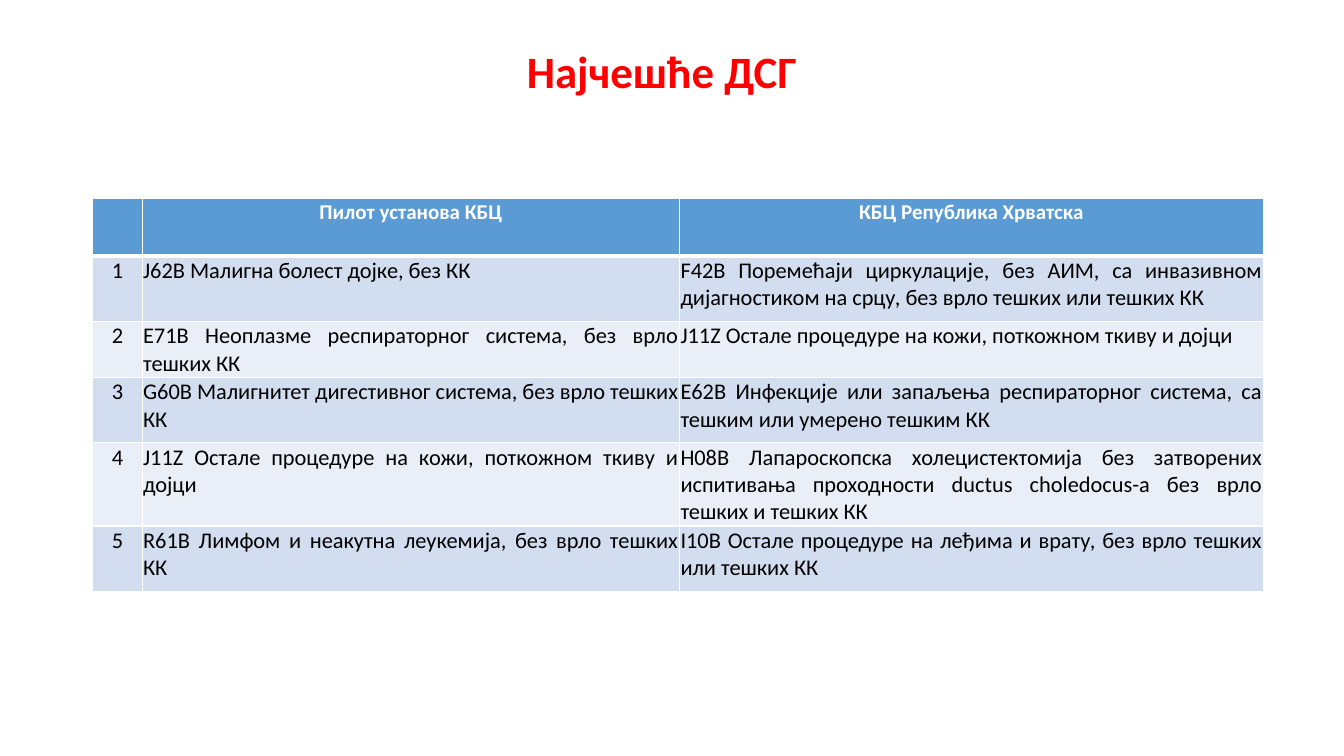
from lxml.etree import SubElement
from pptx import Presentation
from pptx.dml.color import RGBColor
from pptx.enum.text import MSO_ANCHOR, PP_ALIGN
from pptx.oxml.ns import qn
from pptx.util import Inches, Pt

TITLE = "Најчешће ДСГ"
HEADERS = ("", "Пилот установа КБЦ", "КБЦ Република Хрватска")
GROUPS = [
    ("J62B Малигна болест дојке, без КК",
     "F42B Поремећаји циркулације, без АИМ, са инвазивном дијагностиком на срцу, без врло тешких или тешких КК"),
    ("E71B Неоплазме респираторног система, без врло тешких КК",
     "J11Z Остале процедуре на кожи, поткожном ткиву и дојци"),
    ("G60B Малигнитет дигестивног система, без врло тешких КК",
     "E62B Инфекције или запаљења респираторног система, са тешким или умерено тешким КК"),
    ("J11Z Остале процедуре на кожи, поткожном ткиву и дојци",
     "H08B Лапароскопска холецистектомија без затворених испитивања проходности ductus choledocus-a без врло тешких и тешких КК"),
    ("R61B Лимфом и неакутна леукемија, без врло тешких КК",
     "I10B Остале процедуре на леђима и врату, без врло тешких или тешких КК"),
]
COLUMN_WIDTHS = (0.49, 5.33, 5.79)
ROW_HEIGHTS = (0.57, 0.65, 0.46, 0.65, 0.73, 0.65)

THEME = {
    "font": "Calibri",
    "title": {"size": 32, "color": "FF0000", "bold": True},
    "header": {"size": 15, "color": "FFFFFF", "bold": True},
    "body": {"size": 16, "color": "000000", "bold": False},
    "header_fill": "5B9BD5",
    "bands": ("D2DEEF", "EAEFF7"),
    "border": "FFFFFF",
    "thin": 1,
    "thick": 3,
}


def set_attributes(target, values):
    for name, value in values.items():
        setattr(target, name, value)


def write_text(text_frame, text, style, alignment):
    paragraph = text_frame.paragraphs[0]
    paragraph.alignment = alignment
    font = paragraph.font
    if text:
        run = paragraph.add_run()
        run.text = text
        font = run.font
    set_attributes(font, {"name": THEME["font"], "size": Pt(style["size"]), "bold": style["bold"]})
    font.color.rgb = RGBColor.from_string(style["color"])
    return paragraph


def set_borders(cell, row_index):
    thick_sides = {0: "lnB", 1: "lnT"}
    properties = cell._tc.get_or_add_tcPr()
    for side in ("lnL", "lnR", "lnT", "lnB"):
        weight = THEME["thick"] if thick_sides.get(row_index) == side else THEME["thin"]
        line = SubElement(properties, qn(f"a:{side}"), w=str(Pt(weight)))
        fill = SubElement(line, qn("a:solidFill"))
        SubElement(fill, qn("a:srgbClr"), val=THEME["border"])


def add_title(slide):
    title = slide.shapes.title
    set_attributes(title, {"left": Inches(0.72), "top": Inches(0.4),
                           "width": Inches(11.69), "height": Inches(0.66)})
    set_attributes(title.text_frame, {"vertical_anchor": MSO_ANCHOR.MIDDLE, "word_wrap": True})
    paragraph = write_text(title.text_frame, TITLE, THEME["title"], PP_ALIGN.CENTER)
    paragraph.line_spacing = 0.9


def add_groups_table(slide):
    rows = [HEADERS] + [(str(number), *group) for number, group in enumerate(GROUPS, 1)]
    table = slide.shapes.add_table(
        len(rows), len(HEADERS), Inches(0.92), Inches(1.97),
        Inches(sum(COLUMN_WIDTHS)), Inches(sum(ROW_HEIGHTS))).table
    for column, width in zip(table.columns, COLUMN_WIDTHS):
        column.width = Inches(width)
    for row, height in zip(table.rows, ROW_HEIGHTS):
        row.height = Inches(height)
    margins = {"margin_left": Inches(0.01), "margin_right": Inches(0.01),
               "margin_top": Inches(0.01), "margin_bottom": 0}
    for row_index, texts in enumerate(rows):
        is_header = row_index == 0
        color = THEME["header_fill"] if is_header else THEME["bands"][(row_index - 1) % 2]
        style = THEME["header" if is_header else "body"]
        for column_index, text in enumerate(texts):
            cell = table.cell(row_index, column_index)
            set_attributes(cell, {**margins, "vertical_anchor": MSO_ANCHOR.TOP})
            set_borders(cell, row_index)
            cell.fill.solid()
            cell.fill.fore_color.rgb = RGBColor.from_string(color)
            centered = is_header or column_index == 0
            write_text(cell.text_frame, text, style,
                       PP_ALIGN.CENTER if centered else PP_ALIGN.JUSTIFY)


def main():
    presentation = Presentation()
    set_attributes(presentation, {"slide_width": Inches(13.33), "slide_height": Inches(7.5)})
    slide = presentation.slides.add_slide(presentation.slide_layouts.get_by_name("Title Only"))
    add_title(slide)
    add_groups_table(slide)
    presentation.save("out.pptx")


if __name__ == "__main__":
    main()
